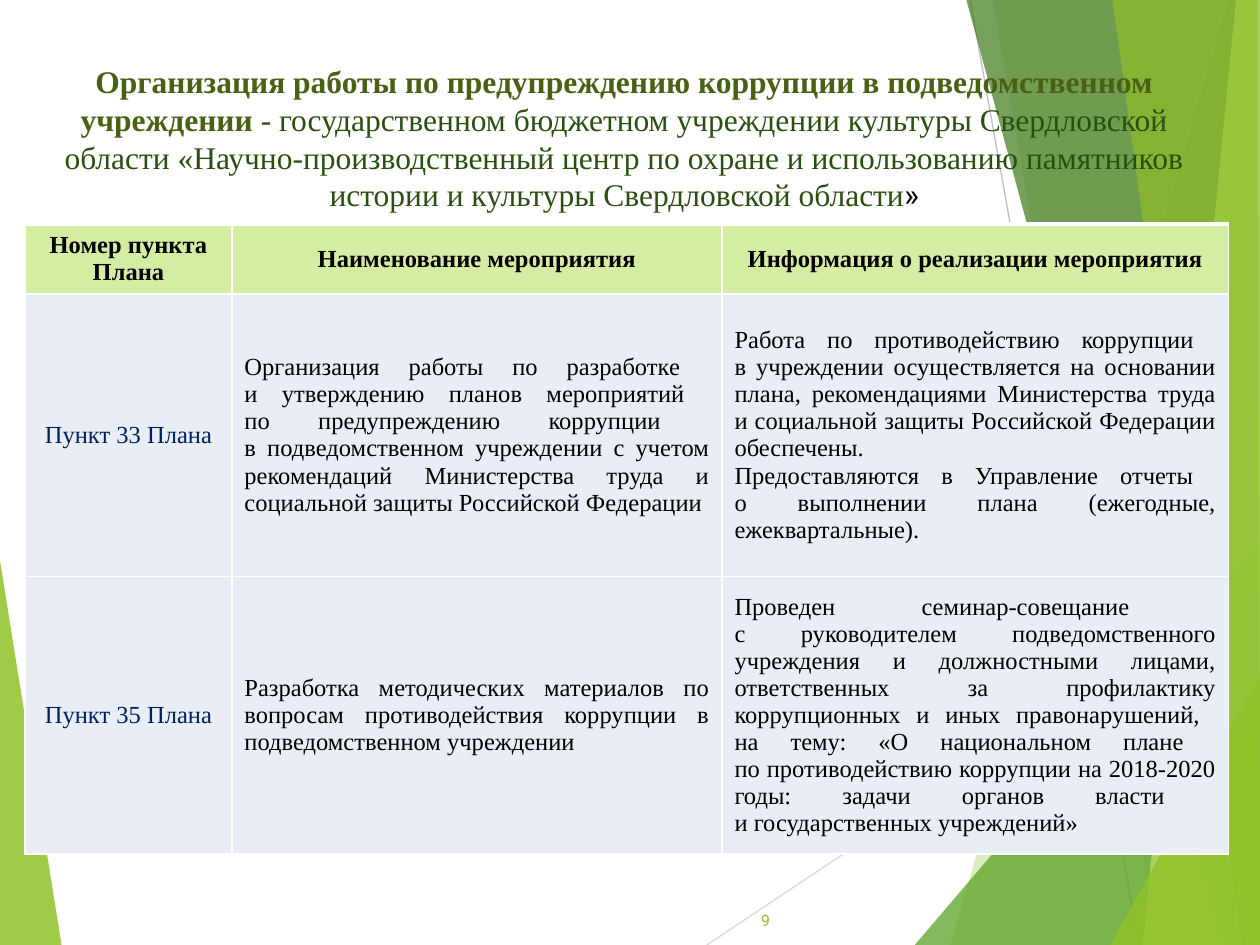
from lxml import etree
from pptx import Presentation
from pptx.dml.color import RGBColor
from pptx.enum.shapes import MSO_CONNECTOR
from pptx.enum.text import MSO_ANCHOR, MSO_AUTO_SIZE, PP_ALIGN
from pptx.oxml.ns import qn
from pptx.util import Inches, Pt

LINE = MSO_CONNECTOR.STRAIGHT
TOP, MID = MSO_ANCHOR.TOP, MSO_ANCHOR.MIDDLE
LEFT, RIGHT, BOTH = PP_ALIGN.CENTER, PP_ALIGN.RIGHT, PP_ALIGN.JUSTIFY
CENTER = PP_ALIGN.CENTER
FIXED = MSO_AUTO_SIZE.NONE

WIDE, HIGH = Inches(10), Inches(7.5)
SERIF, SANS = "Times New Roman", "Roboto"
COLORS = {
    "lime": "90C226", "green": "54A021", "dark": "3F7819", "pale": "C0E474",
    "olive": "486113", "moss": "2A5010", "navy": "002060", "black": "000000",
    "white": "FFFFFF", "head": "D5EDA2", "body": "E9EDF4",
    "light": "D9D9D9", "gray": "BFBFBF",
}

RAYS = [
    ((56.1, 100), (100.1, 60.9), "light"),
    ((77, 0), (90.4, 100), "gray"),
]
LEAF = ([(-0.1, 58.5), (4.9, 100.1), (-0.1, 100)], "lime", 85)
FACETS = [
    ([(97.5, 0), (75.4, 100), (100.2, 100.1), (100.1, 0.1)], "lime", 30),
    ([(78.8, 0), (91.9, 100), (100.1, 100), (100.1, 0)], "lime", 20),
    ([(72.6, 100), (100, 57.2), (100.1, 100)], "green", 72),
    ([(76.7, 0), (97, 100), (100.1, 100), (100.1, 0)], "dark", 70),
    ([(98.1, 0), (90.7, 100), (100.1, 100), (100, 0)], "pale", 70),
    ([(88.3, 0), (98.6, 100), (100, 100), (99.8, 0)], "lime", 65),
    ([(88.1, 100), (100.1, 71.3), (100.1, 100)], "lime", 80),
]

TITLE = [
    ("Организация работы по предупреждению коррупции в подведомственном учреждении ",
     "olive", {"name": SERIF, "size": Pt(18), "bold": True}),
    ("- государственном бюджетном учреждении культуры Свердловской области "
     "«Научно-производственный центр по охране и использованию памятников "
     "истории и культуры Свердловской области",
     "moss", {"name": SERIF, "size": Pt(18), "bold": False}),
    ("»", "black", {"name": SANS, "size": Pt(18), "bold": False}),
]

COLS = [16.4, 38.9, 40.2]
ROWS = [7.4, 29.9, 29.4]
CELLS = [
    [["Номер пункта Плана"], ["Наименование мероприятия"],
     ["Информация о реализации мероприятия"]],
    [["Пункт 33 Плана"],
     ["Организация работы по разработке \vи утверждению планов мероприятий \v"
      "по предупреждению коррупции \vв подведомственном учреждении с учетом "
      "рекомендаций Министерства труда и социальной защиты Российской Федерации"],
     ["Работа по противодействию коррупции \vв учреждении осуществляется на "
      "основании плана, рекомендациями Министерства труда и социальной защиты "
      "Российской Федерации обеспечены.",
      "Предоставляются в Управление отчеты \vо выполнении плана (ежегодные, "
      "ежеквартальные)."]],
    [["Пункт 35 Плана"],
     ["Разработка методических материалов по вопросам противодействия "
      "коррупции в подведомственном учреждении"],
     ["Проведен семинар-совещание \vс руководителем подведомственного "
      "учреждения и должностными лицами, ответственных за профилактику "
      "коррупционных и иных правонарушений, \vна тему: «О национальном плане \v"
      "по противодействию коррупции на 2018-2020 годы: задачи органов власти \v"
      "и государственных учреждений» "]],
]


def across(share):
    """Turn a percentage of the slide width into a length."""
    return round(WIDE * share / 100)


def down(share):
    """Turn a percentage of the slide height into a length."""
    return round(HIGH * share / 100)


def box(x, y, w, h):
    """Turn four percentages into left, top, width and height."""
    return across(x), down(y), across(w), down(h)


def rgb(name):
    """Look up a named colour."""
    return RGBColor.from_string(COLORS[name])


def apply(item, form):
    """Set attributes from a dict of format values."""
    for key, value in form.items():
        setattr(item, key, value)


def add_run(par, text, color, form):
    """Append formatted text, with its line breaks, to a paragraph."""
    for index, part in enumerate(text.split("\v")):
        if index:
            par.add_line_break()
        run = par.add_run()
        run.text = part
        apply(run.font, form)
        run.font.color.rgb = rgb(color)


def add_ray(slide, start, end, color):
    """Draw a thin straight line."""
    ray = slide.shapes.add_connector(
        LINE, across(start[0]), down(start[1]), across(end[0]), down(end[1]))
    ray.line.width = Pt(0.75)
    ray.line.color.rgb = rgb(color)
    etree.SubElement(ray._element.spPr, qn("a:effectLst"))


def add_facet(slide, points, color, alpha):
    """Draw a translucent polygon."""
    spots = [(across(x), down(y)) for x, y in points]
    maker = slide.shapes.build_freeform(*spots[0])
    maker.add_line_segments(spots[1:], close=True)
    facet = maker.convert_to_shape()
    facet.shadow.inherit = False
    facet.line.fill.background()
    facet.fill.solid()
    facet.fill.fore_color.rgb = rgb(color)
    tint = facet._element.spPr.find(qn("a:solidFill"))[0]
    etree.SubElement(tint, qn("a:alpha"), val=str(alpha * 1000))


def add_title(slide):
    """Fill the title placeholder and bring it above the backdrop."""
    title = slide.shapes.title
    apply(title, dict(zip(("left", "top", "width", "height"),
                          box(2.3, 5.9, 94.5, 17.5))))
    apply(title.text_frame, {"vertical_anchor": TOP, "word_wrap": True,
                             "auto_size": FIXED})
    par = title.text_frame.paragraphs[0]
    par.alignment = CENTER
    for text, color, form in TITLE:
        add_run(par, text, color, form)
    slide.shapes._spTree.append(title._element)


def add_edges(cell, head):
    """Give a cell white borders, with a thick top on the header."""
    props = cell._tc.get_or_add_tcPr()
    for side in "LRTB":
        width = Pt(3 if head and side == "T" else 1)
        edge = etree.SubElement(props, qn(f"a:ln{side}"), w=str(width))
        fill = etree.SubElement(edge, qn("a:solidFill"))
        etree.SubElement(fill, qn("a:srgbClr"), val=COLORS["white"])


def fill_cell(cell, texts, head, first):
    """Write and format one table cell."""
    add_edges(cell, head)
    cell.fill.solid()
    cell.fill.fore_color.rgb = rgb("head" if head else "body")
    cell.vertical_anchor = MID
    color = "navy" if first and not head else "black"
    form = {"name": SERIF, "size": Pt(14), "bold": head}
    for index, text in enumerate(texts):
        frame = cell.text_frame
        par = frame.add_paragraph() if index else frame.paragraphs[0]
        par.alignment = CENTER if head or first else BOTH
        add_run(par, text, color, form)


def add_plan(slide):
    """Add the table of plan items."""
    table = slide.shapes.add_table(
        len(ROWS), len(COLS), *box(2, 23.7, sum(COLS), sum(ROWS))).table
    for col, share in zip(table.columns, COLS):
        col.width = across(share)
    for r, (row, share) in enumerate(zip(table.rows, ROWS)):
        row.height = down(share)
        for c, cell in enumerate(row.cells):
            fill_cell(cell, CELLS[r][c], r == 0, c == 0)


def add_number(slide):
    """Add the page number."""
    frame = slide.shapes.add_textbox(*box(42.1, 94.7, 20, 5.3)).text_frame
    apply(frame, {"word_wrap": True, "vertical_anchor": MID})
    par = frame.paragraphs[0]
    par.alignment = RIGHT
    add_run(par, "9", "lime", {"name": SANS, "size": Pt(9)})


def main():
    """Build and save the slide."""
    deck = Presentation()
    apply(deck, {"slide_width": WIDE, "slide_height": HIGH})
    slide = deck.slides.add_slide(deck.slide_layouts[5])
    add_facet(slide, *LEAF)
    for ray in RAYS:
        add_ray(slide, *ray)
    for facet in FACETS:
        add_facet(slide, *facet)
    add_title(slide)
    add_plan(slide)
    add_number(slide)
    deck.save("out.pptx")


if __name__ == "__main__":
    main()
